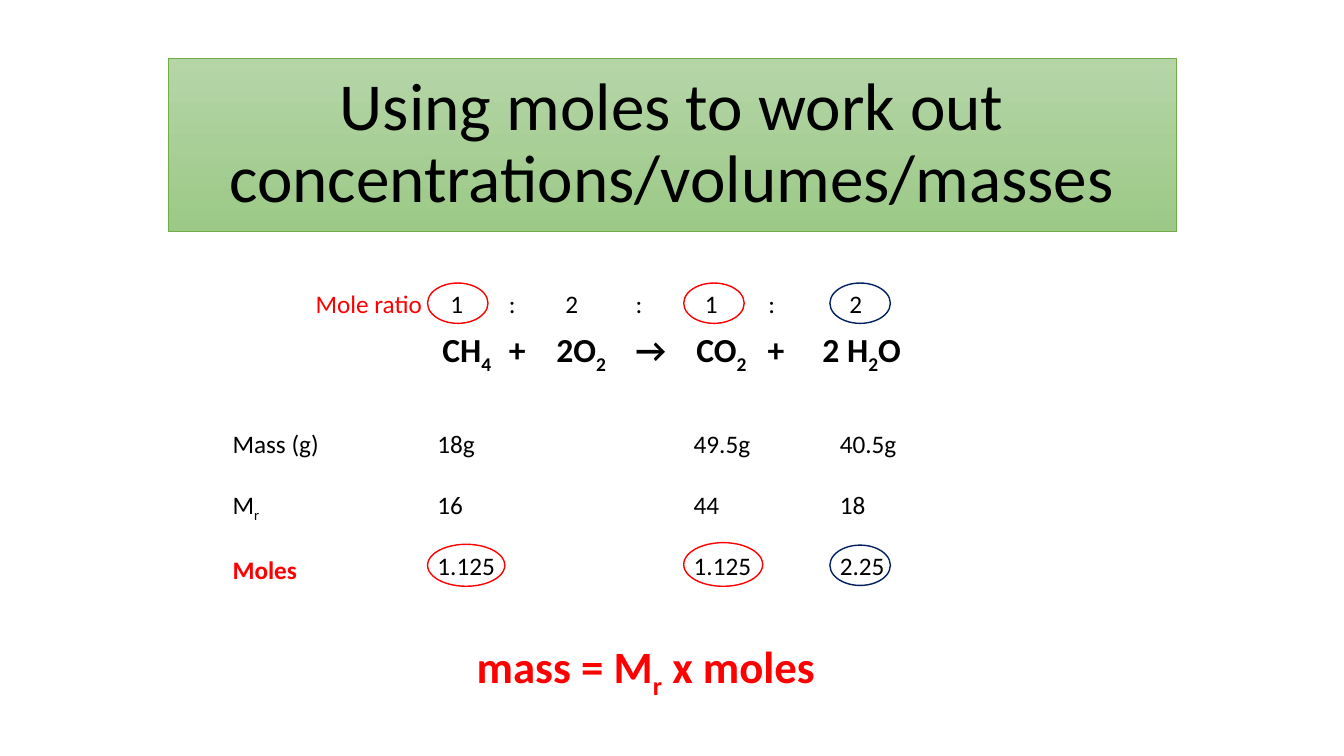
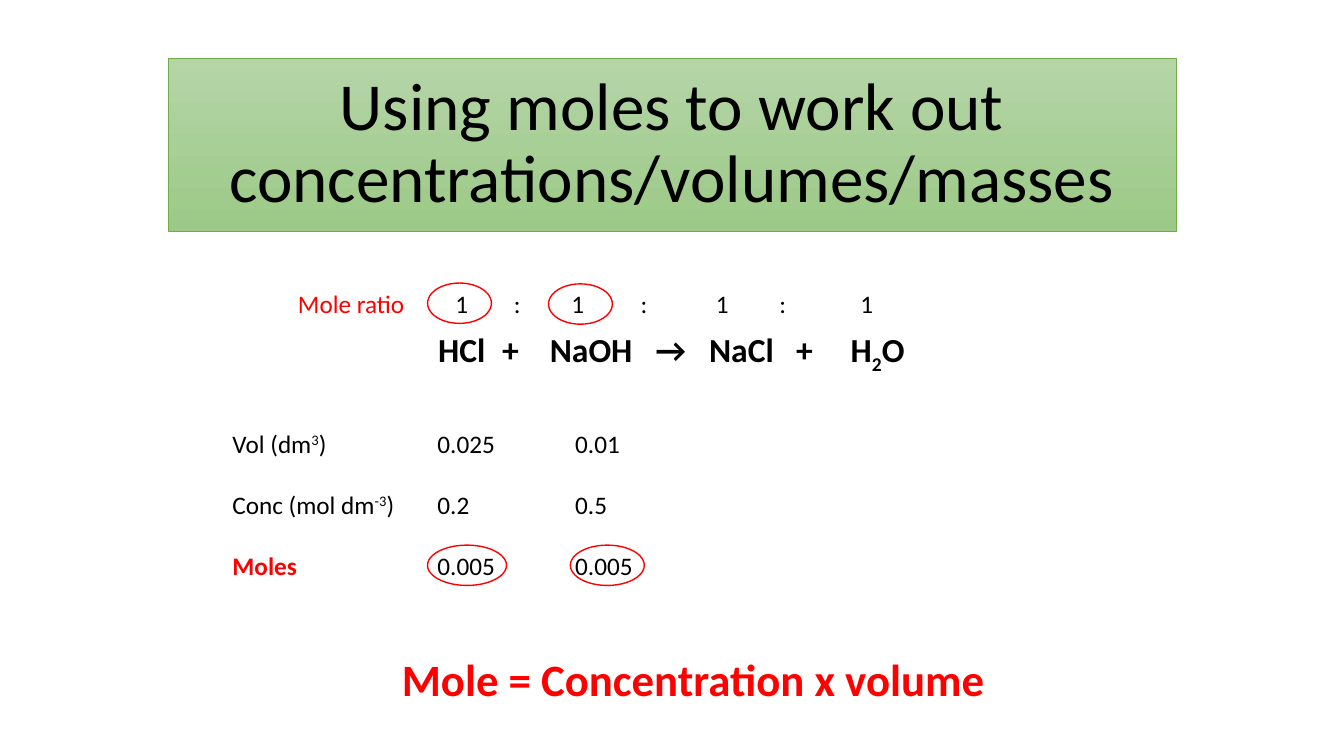
from lxml.etree import SubElement
from pptx import Presentation
from pptx.dml.color import RGBColor
from pptx.enum.shapes import MSO_SHAPE
from pptx.enum.text import MSO_ANCHOR, MSO_AUTO_SIZE, PP_ALIGN
from pptx.oxml.ns import qn
from pptx.util import Inches, Pt

BLACK = RGBColor(0x00, 0x00, 0x00)
RED = RGBColor(0xFF, 0x00, 0x00)
NAVY = RGBColor(0x00, 0x20, 0x60)
GREEN = RGBColor(0x70, 0xAD, 0x47)
GREEN_TOP = RGBColor(0xB5, 0xD5, 0xA7)
GREEN_BOTTOM = RGBColor(0x9C, 0xC9, 0x87)

FONT = "Calibri"
TITLE = "Using moles to work out concentrations/volumes/masses"
COLUMNS, ROWS = 160, 90
INSET = 1.2
RATIO_TOP, EQUATION_TOP, DATA_TOP = 33.7, 38.6, 50.4
LABEL_X, FIRST_X, THIRD_X, FOURTH_X = 26.5, 50.9, 81.4, 98.8
BASELINES = {"_": "-25000", "^": "30000"}


class Deck:
    """Holds the style and the current slide; lengths are grid columns and rows."""

    def __init__(self):
        self.prs = Presentation()
        self.prs.slide_width = Inches(40 / 3)
        self.prs.slide_height = Inches(7.5)
        self.unit_x = self.prs.slide_width / COLUMNS
        self.unit_y = self.prs.slide_height / ROWS

    def box(self, x, y, w, h):
        return (round(x * self.unit_x), round(y * self.unit_y),
                round(w * self.unit_x), round(h * self.unit_y))

    def new_slide(self):
        self.s = self.prs.slides.add_slide(self.prs.slide_layouts[6])
        self.title()

    def style(self, p, size, color=BLACK, bold=False):
        p.font.name, p.font.size, p.font.bold = FONT, Pt(size), bold
        p.font.color.rgb = color

    def add_runs(self, p, text):
        """Adds runs; {_x} is a subscript and {^x} a superscript."""
        for i, part in enumerate(text.replace("}", "{").split("{")):
            if not part:
                continue
            r = p.add_run()
            r.text = part[1:] if i % 2 else part
            if i % 2:
                r._r.get_or_add_rPr().set("baseline", BASELINES[part[0]])

    def shape(self, kind, area, line, width):
        sp = self.s.shapes.add_shape(kind, *self.box(*area))
        sp.shadow.inherit = False
        sp.line.color.rgb, sp.line.width = line, Pt(width)
        return sp

    def title(self):
        sp = self.shape(MSO_SHAPE.RECTANGLE, (20, 7, 120, 20.5), GREEN, 0.5)
        sp.fill.gradient()
        sp.fill.gradient_angle = 270
        for stop, color in zip(sp.fill.gradient_stops, (GREEN_TOP, GREEN_BOTTOM)):
            stop.color.rgb = color
        sp.text_frame.vertical_anchor = MSO_ANCHOR.MIDDLE
        p = sp.text_frame.paragraphs[0]
        p.alignment, p.line_spacing = PP_ALIGN.CENTER, 0.9
        self.add_runs(p, TITLE)
        self.style(p, 48)

    def ring(self, x, y, w, h=4.8, color=RED):
        self.shape(MSO_SHAPE.OVAL, (x, y, w, h), color, 1).fill.background()

    def text_frame(self, area, wrap):
        tf = self.s.shapes.add_textbox(*self.box(*area)).text_frame
        tf.word_wrap, tf.auto_size = wrap, MSO_AUTO_SIZE.SHAPE_TO_FIT_TEXT
        return tf

    def tabbed(self, area, stops, kinds):
        """Returns a paragraph with tab stops at the given slide columns."""
        p = self.text_frame(area, True).paragraphs[0]
        tabs = SubElement(p._p.get_or_add_pPr(), qn("a:tabLst"))
        for stop, kind in zip(stops, kinds):
            pos = round((stop - area[0] - INSET) * self.unit_x)
            SubElement(tabs, qn("a:tab"), pos=str(pos), algn=kind)
        return p

    def ratio(self, x, w, numbers, label_x, stops):
        kinds = ["l"] + ["ctr"] * len(stops)
        p = self.tabbed((x, RATIO_TOP, w, 4.8), [label_x] + stops, kinds)
        self.add_runs(p, "\tMole ratio")
        self.add_runs(p, "\t" + "\t:\t".join(numbers))
        self.style(p, 18)
        p.runs[0].font.color.rgb = RED

    def equation(self, terms, stops):
        p = self.tabbed((20, EQUATION_TOP, 120, 6), stops, ["ctr"] * len(stops))
        self.add_runs(p, "".join("\t" + term for term in terms))
        self.style(p, 24, bold=True)

    def data(self, x, w, entries, last_red=False):
        tf = self.text_frame((x, DATA_TOP, w, 19.4), False)
        for i, entry in enumerate(entries):
            p = tf.add_paragraph() if i else tf.paragraphs[0]
            p.space_before = Pt(22 if i else 0)
            self.add_runs(p, entry)
            red = last_red and i == len(entries) - 1
            self.style(p, 18, RED if red else BLACK, red)

    def formula(self, x, y, w, text):
        p = self.text_frame((x, y, w, 7.7), False).paragraphs[0]
        p.alignment = PP_ALIGN.CENTER
        self.add_runs(p, text)
        self.style(p, 32, RED, True)


def mass_slide(deck):
    deck.new_slide()
    deck.equation(["CH{_4}", "+", "2O{_2}", "→", "CO{_2}", "+", "2 H{_2}O"],
                  [55.6, 61.6, 69.2, 77.5, 85.9, 92.4, 102.6])
    deck.data(LABEL_X, 12.8, ["Mass (g)", "M{_r}", "Moles"], last_red=True)
    for x, entries in ((FIRST_X, ["18g", "16", "1.125"]),
                       (THIRD_X, ["49.5g", "44", "1.125"]),
                       (FOURTH_X, ["40.5g", "18", "2.25"])):
        deck.data(x, 9.3, entries)
    deck.ratio(35, 72.8, "1212", 37.6, [54.4, 61, 68.1, 76.1, 84.7, 91.9, 101.9])
    deck.formula(55.3, 75.5, 43.2, "mass = M{_r} x moles")
    for x, color in ((FIRST_X, RED), (THIRD_X, RED), (FOURTH_X, NAVY)):
        deck.ring(x, RATIO_TOP, 7.2, color=color)
    deck.ring(FOURTH_X, 64.9, 7.2, color=NAVY)
    deck.ring(THIRD_X, 64.6, 9.4, 5.2)
    deck.ring(FIRST_X, 64.8, 9.2, 5)


def concentration_slide(deck):
    deck.new_slide()
    deck.equation(["HCl", "+", "NaOH", "→", "NaCl", "+", "H{_2}O"],
                  [55, 60.8, 70.4, 79.9, 88.3, 95.8, 104.5])
    deck.data(LABEL_X, 22.1, ["Vol (dm{^3})", "Conc (mol dm{^-3})", "Moles"],
              last_red=True)
    deck.data(FIRST_X, 9.3, ["0.025", "0.2", "0.005"])
    deck.data(67.3, 9.3, ["0.01", "0.5", "0.005"])
    deck.ratio(32.9, 78.2, "1111", 35.5, [55, 61.6, 68.8, 76.7, 86, 93.2, 103.2])
    deck.formula(46.3, 77, 72.5, "Mole = Concentration x volume")
    for x, y, w in ((FIRST_X, RATIO_TOP, 7.6), (65.3, 33.8, 7.6),
                    (67.9, 64.9, 8.8), (FIRST_X, 64.9, 9.4)):
        deck.ring(x, y, w)


def main():
    deck = Deck()
    mass_slide(deck)
    concentration_slide(deck)
    deck.prs.save("out.pptx")


if __name__ == "__main__":
    main()
